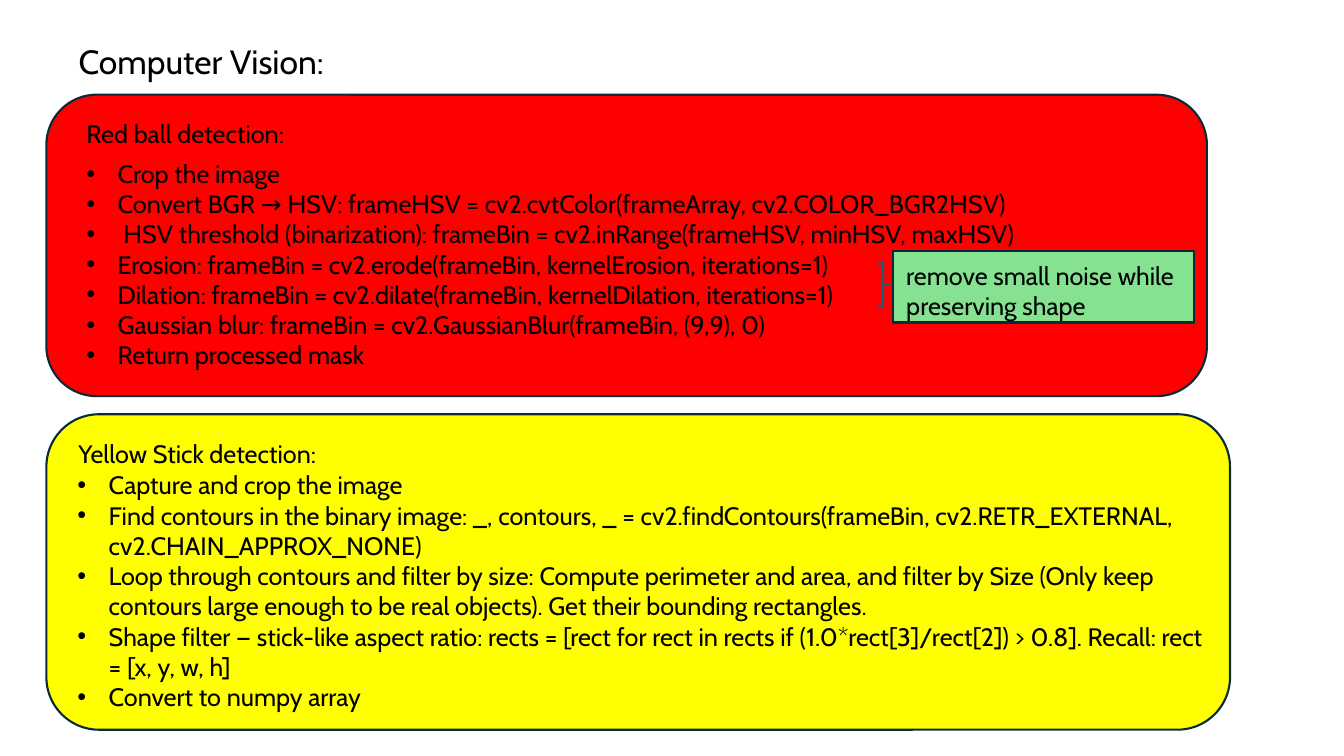
from lxml.etree import SubElement
from pptx import Presentation
from pptx.dml.color import RGBColor
from pptx.enum.shapes import MSO_SHAPE as Preset
from pptx.enum.text import MSO_ANCHOR as Anchor
from pptx.enum.text import MSO_AUTO_SIZE as AutoSize
from pptx.enum.text import PP_ALIGN as Align
from pptx.oxml.ns import qn
from pptx.util import Inches, Pt

BLACK = RGBColor(0x00, 0x00, 0x00)
RED = RGBColor(0xFF, 0x00, 0x00)
YELLOW = RGBColor(0xFF, 0xFF, 0x00)
GREEN = RGBColor(0x84, 0xE2, 0x91)
NAVY = RGBColor(0x09, 0x2A, 0x39)
TEAL = RGBColor(0x15, 0x60, 0x82)

RED_STEPS = [
    "Crop the image",
    "Convert BGR → HSV: frameHSV = cv2.cvtColor(frameArray, cv2.COLOR_BGR2HSV)",
    " HSV threshold (binarization): frameBin = cv2.inRange(frameHSV, minHSV, maxHSV)",
    "Erosion: frameBin = cv2.erode(frameBin, kernelErosion, iterations=1)",
    "Dilation: frameBin = cv2.dilate(frameBin, kernelDilation, iterations=1)",
    "Gaussian blur: frameBin = cv2.GaussianBlur(frameBin, (9,9), 0)",
    "Return processed mask",
]
YELLOW_STEPS = [
    "Capture and crop the image",
    "Find contours in the binary image: _, contours, _ = "
    "cv2.findContours(frameBin, cv2.RETR_EXTERNAL, cv2.CHAIN_APPROX_NONE)",
    "Loop through contours and filter by size: Compute perimeter and area, "
    "and filter by Size (Only keep contours large enough to be real objects). "
    "Get their bounding rectangles.",
    "Shape filter — stick-like aspect ratio: rects = [rect for rect in rects "
    "if (1.0*rect[3]/rect[2]) > 0.8]. Recall: rect = [x, y, w, h]",
    "Convert to numpy array",
]


class SlideBuilder:
    """Draws on one slide; places are percentages of its width and height."""

    font_name = "Cabin"
    body_size = Pt(18)
    title_size = Pt(24)
    line_width = Pt(1.5)
    indent = Inches(0.31)

    def __init__(self, deck):
        self.deck = deck
        self.slide = deck.slides.add_slide(deck.slide_layouts[5])

    def place(self, left, top, width, height):
        across, down = self.deck.slide_width / 100, self.deck.slide_height / 100
        return (round(left * across), round(top * down),
                round(width * across), round(height * down))

    def fill_text(self, box, lines, size, bulleted=False):
        frame = box.text_frame
        frame.text = "\n".join(lines)
        frame.word_wrap = True
        frame.auto_size = AutoSize.SHAPE_TO_FIT_TEXT
        frame.vertical_anchor = Anchor.TOP
        for para in frame.paragraphs:
            para.alignment = Align.LEFT
            if bulleted:
                self.add_bullet(para)
            para.font.name = self.font_name
            para.font.size = size
            para.font.color.rgb = BLACK

    def add_bullet(self, para):
        props = para._p.get_or_add_pPr()
        props.set("marL", str(self.indent))
        props.set("indent", str(-self.indent))
        SubElement(props, qn("a:buFont"), typeface="Arial")
        SubElement(props, qn("a:buChar"), char="•")

    def title(self, text, *area):
        box = self.slide.shapes.title
        box.left, box.top, box.width, box.height = self.place(*area)
        self.fill_text(box, [text], self.title_size)

    def text(self, lines, *area, bulleted=False):
        box = self.slide.shapes.add_textbox(*self.place(*area))
        self.fill_text(box, lines, self.body_size, bulleted)

    def shape(self, preset, *area, fill=None, line=NAVY):
        shape = self.slide.shapes.add_shape(preset, *self.place(*area))
        shape.shadow.inherit = False
        if fill is None:
            shape.fill.background()
        else:
            shape.fill.solid()
            shape.fill.fore_color.rgb = fill
        shape.line.color.rgb = line
        shape.line.width = self.line_width


def main():
    deck = Presentation()
    deck.slide_width, deck.slide_height = Inches(13.33), Inches(7.5)
    page = SlideBuilder(deck)
    page.title("Computer Vision:", 5.1, 4.8, 46.8, 6.67)

    # Red ball panel
    page.shape(Preset.ROUNDED_RECTANGLE, 3.45, 12.53, 86.35, 39.87, fill=RED)
    page.text(["Red ball detection:"], 5.7, 14.93, 73, 5.33)
    page.text(RED_STEPS, 5.7, 20.27, 79.2, 30, bulleted=True)

    # Note on erosion and dilation
    page.shape(Preset.RIGHT_BRACE, 65.34, 34.67, 0.75, 5.87, line=TEAL)
    page.shape(Preset.RECTANGLE, 66.47, 33.2, 22.36, 9.47, fill=GREEN)
    page.text(["remove small noise while preserving shape"],
              66.69, 33.73, 23.33, 9)

    # Yellow stick panel
    page.shape(Preset.ROUNDED_RECTANGLE, 3.45, 54.8, 88.07, 41.73, fill=YELLOW)
    page.text(["Yellow Stick detection:"], 5.1, 57.33, 26.63, 5.33)
    page.text(YELLOW_STEPS, 5.03, 61.47, 85.9, 35, bulleted=True)

    deck.save("out.pptx")


if __name__ == "__main__":
    main()
